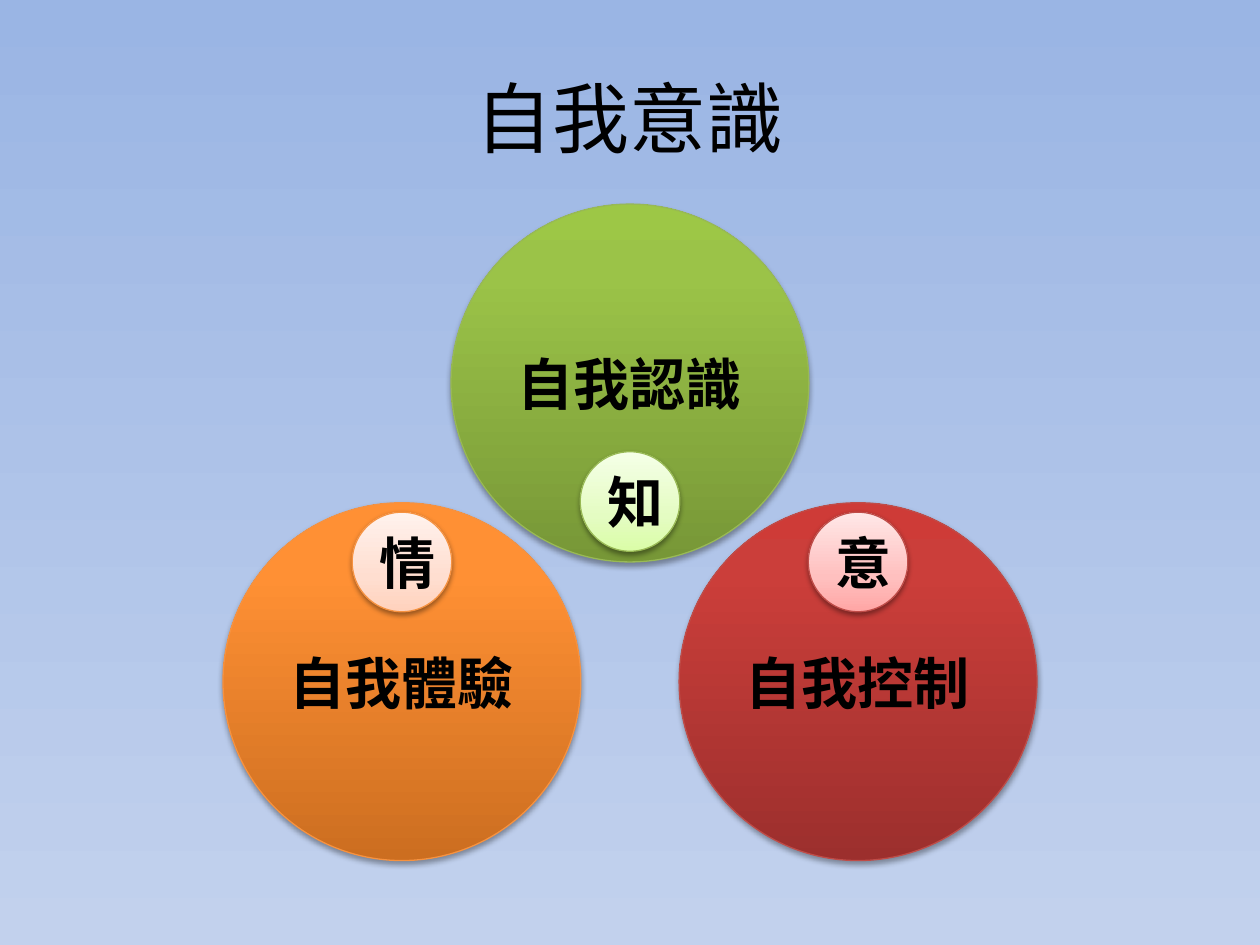
from lxml import etree
from pptx import Presentation
from pptx.dml.color import RGBColor
from pptx.enum import shapes, text
from pptx.oxml.ns import qn
from pptx.util import Inches, Pt


def color(value):
    return RGBColor.from_string(value)


class SlideBuilder:
    """Holds the shared style and the current slide."""

    font_name = "Noto Sans CJK SC"
    font_color = "000000"

    def __init__(self, page):
        self.page = page

    def gradient(self, fill, element, stops, angle):
        fill.gradient()
        fill.gradient_angle = (360 - angle) % 360
        stop_list = next(element.iter(qn("a:gsLst")))
        for old_stop in list(stop_list):
            stop_list.remove(old_stop)
        for position, value in stops:
            stop = etree.SubElement(stop_list, qn("a:gs"), pos=str(position * 1000))
            etree.SubElement(stop, qn("a:srgbClr"), val=value)

    def background(self, stops):
        self.gradient(self.page.background.fill, self.page.element, stops, 90)

    def shadow(self, shape, opacity, distance):
        shape.shadow.inherit = False
        effects = shape.element.spPr.find(qn("a:effectLst"))
        outer = etree.SubElement(
            effects, qn("a:outerShdw"), blurRad=str(Pt(3.1)), dist=str(Pt(distance)),
            dir=str(90 * 60000), rotWithShape="0")
        shade = etree.SubElement(outer, qn("a:srgbClr"), val="000000")
        etree.SubElement(shade, qn("a:alpha"), val=str(opacity * 1000))

    def label(self, shape, wording, **formats):
        frame = shape.text_frame
        frame.word_wrap = True
        frame.vertical_anchor = text.MSO_ANCHOR.MIDDLE
        para = frame.paragraphs[0]
        para.alignment = text.PP_ALIGN.CENTER
        span = para.add_run()
        span.text = wording
        for name, value in {"name": self.font_name, **formats}.items():
            setattr(span.font, name, value)
        span.font.color.rgb = color(self.font_color)
        # East Asian glyphs take their own typeface element
        properties = span._r.get_or_add_rPr()
        etree.SubElement(properties, qn("a:ea"), typeface=self.font_name)

    def title(self, wording):
        box = self.page.shapes.title
        place = {"left": 0.5, "top": 0.3, "width": 9, "height": 1.25}
        for name, value in place.items():
            setattr(box, name, Inches(value))
        self.label(box, wording, size=Pt(44))

    def circle(self, wording, center, diameter, stops, outline, opacity, distance):
        left, top = (Inches(c - diameter / 2) for c in center)
        disc = self.page.shapes.add_shape(
            shapes.MSO_SHAPE.OVAL, left, top, Inches(diameter), Inches(diameter))
        self.gradient(disc.fill, disc.element, stops, 270)
        disc.line.color.rgb = color(outline)
        disc.line.width = Pt(0.75)
        self.shadow(disc, opacity, distance)
        self.label(disc, wording, size=Pt(32), bold=True)


def main():
    deck = Presentation()
    deck.slide_width, deck.slide_height = Inches(10), Inches(7.5)
    builder = SlideBuilder(deck.slides.add_slide(deck.slide_layouts[5]))

    builder.background([(0, "9AB5E4"), (100, "C2D1ED")])
    builder.title("自我意識")

    # Aspect, its center, badge word, badge center height, outline, disc and badge colors
    aspects = [
        ("自我認識", (5, 3.04), "知", 3.98, "98B955",
         ("779737", "9BC348", "9DC746"), ("DAFDA7", "E4FCC2", "F5FFE7")),
        ("自我體驗", (3.19, 5.41), "情", 4.46, "F69240",
         ("CC6E20", "FF9034", "FF9136"), ("FFD2BD", "FFDED0", "FFF2ED")),
        ("自我控制", (6.81, 5.41), "意", 4.46, "BF4C48",
         ("9C2F2D", "CB3E3A", "CE3B37"), ("FFA6A5", "FFC0BF", "FFE7E7")),
    ]

    # Large circles
    for aspect, center, _, _, outline, shades, _ in aspects:
        builder.circle(aspect, center, 2.84, list(zip((0, 80, 100), shades)),
                       outline, opacity=35, distance=1.8)

    # Small badges on top
    for _, center, badge, height, outline, _, tints in aspects:
        builder.circle(badge, (center[0], height), 0.79, list(zip((0, 35, 100), tints)),
                       outline, opacity=38, distance=1.6)

    deck.save("out.pptx")


if __name__ == "__main__":
    main()
